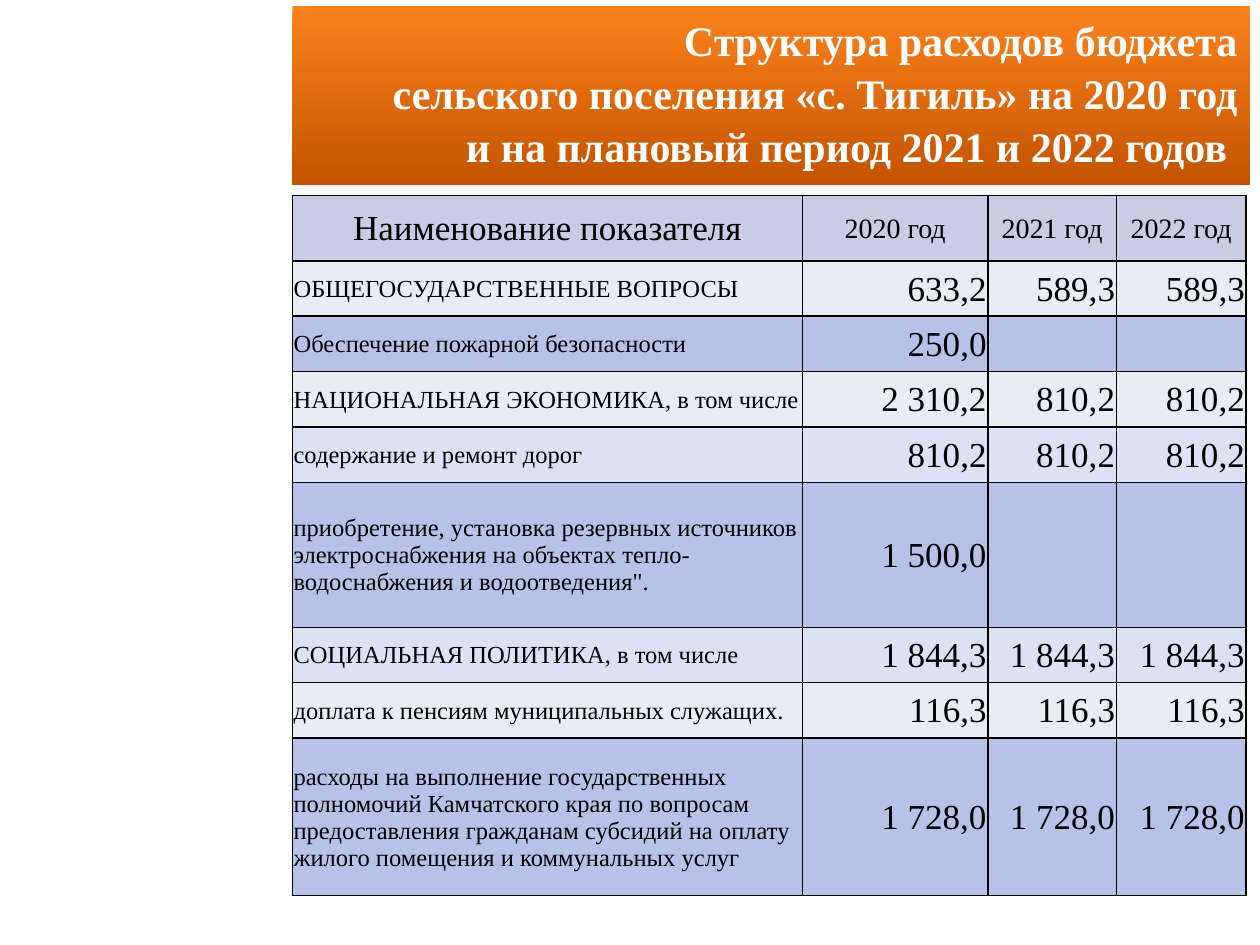
from dataclasses import dataclass

from lxml.etree import SubElement
from pptx import Presentation
from pptx.dml.color import RGBColor
from pptx.enum.shapes import MSO_SHAPE
from pptx.enum.text import MSO_ANCHOR, PP_ALIGN
from pptx.oxml.ns import qn
from pptx.slide import Slide
from pptx.table import Table, _Cell
from pptx.text.text import TextFrame
from pptx.util import Inches, Pt


@dataclass(frozen=True)
class Theme:
    font: str = "Times New Roman"
    ink: str = "000000"
    title_ink: str = "FFFFFF"
    banner_top: str = "FB811D"
    banner_bottom: str = "C45400"
    header: str = "C8CDE5"
    pale: str = "E9EBF5"
    light: str = "DCE1F4"
    strong: str = "B8C2E9"
    title_size: int = 24
    large_size: int = 20
    year_size: int = 16
    label_size: int = 14


THEME = Theme()


@dataclass(frozen=True)
class BudgetRow:
    label: str
    amounts: tuple[str, str, str]
    fill: str
    height: float = 0.44


LEFT = 2.32
COLUMN_WIDTHS = (4.05, 1.47, 1.02, 1.03)
TITLE = (
    "Структура расходов бюджета\v"
    "сельского поселения «с. Тигиль» на 2020 год\v"
    "и на плановый период 2021 и 2022 годов "
)
HEADER = BudgetRow("Наименование показателя", ("2020 год", "2021 год", "2022 год"),
                   THEME.header, 0.52)
EXPENSES = (
    BudgetRow("ОБЩЕГОСУДАРСТВЕННЫЕ ВОПРОСЫ", ("633,2", "589,3", "589,3"), THEME.pale),
    BudgetRow("Обеспечение пожарной безопасности", ("250,0", "", ""), THEME.strong),
    BudgetRow("НАЦИОНАЛЬНАЯ ЭКОНОМИКА, в том числе", ("2 310,2", "810,2", "810,2"), THEME.pale),
    BudgetRow("содержание и ремонт дорог", ("810,2", "810,2", "810,2"), THEME.light),
    BudgetRow("приобретение, установка резервных источников электроснабжения "
              "на объектах тепло- водоснабжения и водоотведения\".",
              ("1 500,0", "", ""), THEME.strong, 1.15),
    BudgetRow("СОЦИАЛЬНАЯ ПОЛИТИКА, в том числе", ("1 844,3", "1 844,3", "1 844,3"), THEME.light),
    BudgetRow("доплата к пенсиям муниципальных служащих.", ("116,3", "116,3", "116,3"), THEME.pale),
    BudgetRow("расходы на выполнение государственных полномочий Камчатского края "
              "по вопросам предоставления гражданам субсидий на оплату жилого "
              "помещения и коммунальных услуг",
              ("1 728,0", "1 728,0", "1 728,0"), THEME.strong, 1.25),
)


def write_text(frame: TextFrame, text: str, *, size: int, align: PP_ALIGN,
               color: str = THEME.ink, bold: bool = False, spacing: float = 1.0) -> None:
    paragraph = frame.paragraphs[0]
    paragraph.text = text
    paragraph.alignment = align
    paragraph.line_spacing = spacing
    for run in paragraph.runs:
        run.font.name = THEME.font
        run.font.size = Pt(size)
        run.font.bold = bold
        run.font.color.rgb = RGBColor.from_string(color)


def draw_banner(slide: Slide) -> None:
    banner = slide.shapes.add_shape(MSO_SHAPE.RECTANGLE, Inches(LEFT), Inches(0.05),
                                    Inches(7.6), Inches(1.42))
    banner.shadow.inherit = False
    banner.line.fill.background()
    banner.fill.gradient()
    banner.fill.gradient_angle = 270
    for stop, position, color in zip(banner.fill.gradient_stops, (0, 1),
                                     (THEME.banner_top, THEME.banner_bottom)):
        stop.position = position
        stop.color.rgb = RGBColor.from_string(color)
    frame = banner.text_frame
    frame.word_wrap = True
    frame.vertical_anchor = MSO_ANCHOR.TOP
    write_text(frame, TITLE, size=THEME.title_size, align=PP_ALIGN.RIGHT,
               color=THEME.title_ink, bold=True, spacing=1.05)


def add_borders(cell: _Cell) -> None:
    properties = cell._tc.get_or_add_tcPr()
    for side in ("a:lnL", "a:lnR", "a:lnT", "a:lnB"):
        border = SubElement(properties, qn(side), w=str(Pt(1)))
        solid = SubElement(border, qn("a:solidFill"))
        SubElement(solid, qn("a:srgbClr"), val=THEME.ink)


def format_cell(cell: _Cell, text: str, fill: str, size: int, align: PP_ALIGN) -> None:
    add_borders(cell)
    cell.fill.solid()
    cell.fill.fore_color.rgb = RGBColor.from_string(fill)
    cell.vertical_anchor = MSO_ANCHOR.MIDDLE
    cell.margin_left = cell.margin_right = cell.margin_top = Inches(0.01)
    cell.margin_bottom = Inches(0)
    write_text(cell.text_frame, text, size=size, align=align)


def fill_row(table: Table, index: int, row: BudgetRow, label_size: int, amount_size: int,
             label_align: PP_ALIGN, amount_align: PP_ALIGN) -> None:
    table.rows[index].height = Inches(row.height)
    format_cell(table.cell(index, 0), row.label, row.fill, label_size, label_align)
    for column, amount in enumerate(row.amounts, start=1):
        format_cell(table.cell(index, column), amount, row.fill, amount_size, amount_align)


def draw_budget(slide: Slide) -> None:
    height = sum(row.height for row in (HEADER, *EXPENSES))
    budget = slide.shapes.add_table(len(EXPENSES) + 1, len(COLUMN_WIDTHS), Inches(LEFT),
                                    Inches(1.55), Inches(sum(COLUMN_WIDTHS)),
                                    Inches(height)).table
    for column, width in zip(budget.columns, COLUMN_WIDTHS):
        column.width = Inches(width)
    fill_row(budget, 0, HEADER, THEME.large_size, THEME.year_size,
             PP_ALIGN.CENTER, PP_ALIGN.CENTER)
    for index, expense in enumerate(EXPENSES, start=1):
        fill_row(budget, index, expense, THEME.label_size, THEME.large_size,
                 PP_ALIGN.LEFT, PP_ALIGN.RIGHT)


def main() -> None:
    presentation = Presentation()
    presentation.slide_width = Inches(10)
    presentation.slide_height = Inches(7.5)
    slide = presentation.slides.add_slide(presentation.slide_layouts[6])

    # Title banner
    draw_banner(slide)

    # Expenses by year
    draw_budget(slide)

    presentation.save("out.pptx")


if __name__ == "__main__":
    main()
